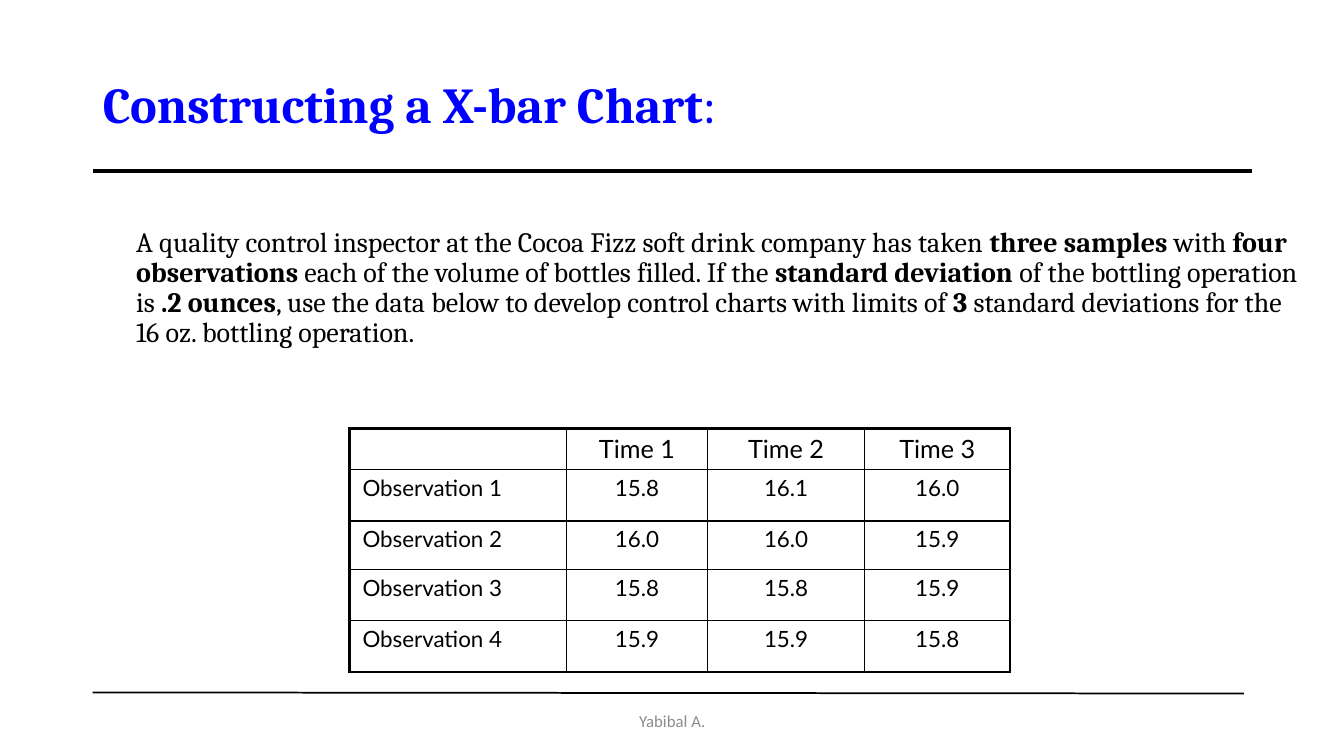
import pptx
import pptx.util
import pptx.dml.color
import pptx.enum.text
import pptx.enum.shapes
import pptx.oxml
import pptx.oxml.ns

Pt = pptx.util.Pt
Align = pptx.enum.text.PP_ALIGN
Anchor = pptx.enum.text.MSO_ANCHOR

# Content: text runs are (text, bold)
TITLE = [("Constructing a X-bar Chart", True), (":", False)]
BODY = [
    ("A quality control inspector at the Cocoa Fizz soft drink company has taken ", False),
    ("three samples ", True),
    ("with", False),
    (" four observations", True),
    (" each of the volume of bottles filled. If the ", False),
    ("standard deviation", True),
    (" of the bottling operation is ", False),
    (".2 ounces", True),
    (", use the data below to develop control charts with limits of", False),
    (" 3", True),
    (" standard deviations for the 16 oz. bottling operation.", False),
]
HEAD = ["", "Time 1", "Time 2", "Time 3"]
DATA = [
    ("15.8", "16.1", "16.0"),
    ("16.0", "16.0", "15.9"),
    ("15.8", "15.8", "15.9"),
    ("15.9", "15.9", "15.8"),
]
FOOTER = [("Yabibal A.", False)]
RULES = [  # x1, y1, x2, y2, width
    (66.24, 121.9, 894.2, 121.9, 3),
    (66.24, 494.6, 888.5, 495.4, 1.25),
]
COLS = [154.8, 100.8, 112.3, 103.7]
ROWS = [28.8, 36.7, 34.6, 36.7, 36.7]


def color(code):
    return pptx.dml.color.RGBColor.from_string(code)


def write(frame, runs, size, font="Cambria", ink="000000", align=Align.LEFT,
          lead=None, before=0, anchor=Anchor.TOP):
    frame.word_wrap = True
    frame.auto_size = pptx.enum.text.MSO_AUTO_SIZE.NONE
    frame.vertical_anchor = anchor
    para = frame.paragraphs[0]
    para.alignment, para.line_spacing = align, lead
    para.space_before = Pt(before)
    for text, bold in runs:
        run = para.add_run()
        run.text = text
        run.font.name, run.font.size, run.font.bold = font, Pt(size), bold
        run.font.color.rgb = color(ink)
    return para


def place(shape, *box):
    shape.left, shape.top, shape.width, shape.height = map(Pt, box)


def border(cell, widths):
    props = cell._tc.get_or_add_tcPr()
    for i, (side, width) in enumerate(zip("LRTB", widths)):
        line = pptx.oxml.parse_xml(
            f'<a:ln{side} {pptx.oxml.ns.nsdecls("a")} w="{int(Pt(width))}">'
            '<a:solidFill><a:srgbClr val="000000"/></a:solidFill>'
            f'</a:ln{side}>')
        props.insert(i, line)


deck = pptx.Presentation()
deck.slide_width, deck.slide_height = Pt(960), Pt(540)
slide = deck.slides.add_slide(deck.slide_layouts[1])

# Rules under the title and above the footer
for x1, y1, x2, y2, width in RULES:
    rule = slide.shapes.add_connector(
        pptx.enum.shapes.MSO_CONNECTOR.STRAIGHT, Pt(x1), Pt(y1), Pt(x2), Pt(y2))
    rule.line.color.rgb = color("000000")
    rule.line.width = Pt(width)
    rule._element.spPr.append(pptx.oxml.parse_xml(
        f'<a:effectLst {pptx.oxml.ns.nsdecls("a")}/>'))

# Title and problem text
title, body = slide.shapes.title, slide.placeholders[1]
place(title, 66.24, 28.8, 828, 95)
write(title.text_frame, TITLE, 36, ink="0000FF", lead=0.9, anchor=Anchor.MIDDLE)
place(body, 72, 159.1, 868.3, 351.4)
props = write(body.text_frame, BODY, 20, lead=0.9, before=10)._p.get_or_add_pPr()
props.set("marL", str(int(Pt(18))))
props.set("indent", "0")
props.append(pptx.oxml.parse_xml(f'<a:buNone {pptx.oxml.ns.nsdecls("a")}/>'))

# Table of samples
table = slide.shapes.add_table(len(ROWS), len(COLS), Pt(249.8), Pt(306.2),
                               Pt(sum(COLS)), Pt(sum(ROWS))).table
table.first_row = table.horz_banding = False
for col, width in zip(table.columns, COLS):
    col.width = Pt(width)
for row, height in zip(table.rows, ROWS):
    row.height = Pt(height)
grid = [HEAD] + [(f"Observation {n}", *vals) for n, vals in enumerate(DATA, 1)]
for r, vals in enumerate(grid):
    for c, text in enumerate(vals):
        cell = table.cell(r, c)
        cell.fill.background()
        cell.margin_left = cell.margin_right = Pt(9.2)
        cell.margin_top = cell.margin_bottom = Pt(3.6)
        if text:
            para = cell.text_frame.paragraphs[0]
            para.alignment = Align.CENTER if c else Align.LEFT
            run = para.add_run()
            run.text = text
            run.font.name, run.font.size = "Lato", Pt(16 if r else 18)
            run.font.color.rgb = color("000000")
        edges = (c == 0, c == len(COLS) - 1, r == 0, r == len(ROWS) - 1)
        border(cell, [2.25 if edge else 1 for edge in edges])

# Footer
foot = slide.shapes.add_textbox(Pt(318.2), Pt(500.4), Pt(324), Pt(28.8))
write(foot.text_frame, FOOTER, 12, font="Calibri", ink="8C8C8C",
      align=Align.CENTER, anchor=Anchor.MIDDLE)

deck.save("out.pptx")
